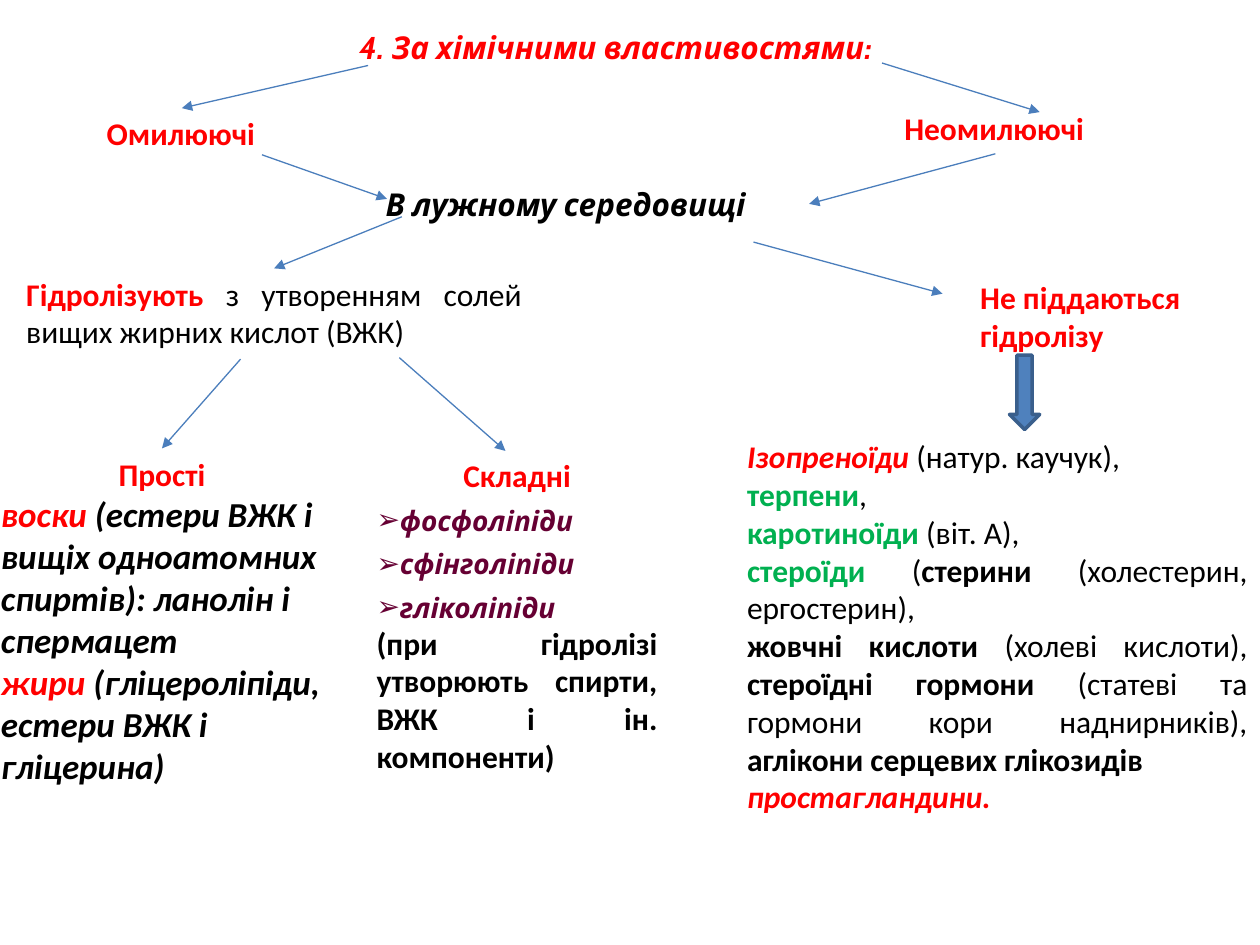
from lxml.etree import SubElement
from pptx import Presentation
from pptx.dml.color import RGBColor
from pptx.enum.shapes import MSO_CONNECTOR as Connector, MSO_SHAPE as Shape
from pptx.enum.text import MSO_ANCHOR as Anchor, MSO_AUTO_SIZE as AutoSize, PP_ALIGN as Align
from pptx.oxml.ns import qn
from pptx.util import Cm, Pt

RED = "FF0000"
GREEN = "00B050"
PURPLE = "660033"
BLACK = "000000"
TOP, BOTTOM = 0, 2


def rgb(value):
    return RGBColor.from_string(value)


def place(shape, left, top, width, height):
    shape.left, shape.top = Cm(left), Cm(top)
    shape.width, shape.height = Cm(width), Cm(height)


def add_run(paragraph, text, size=18, font="Calibri", color=BLACK, bold=True, italic=False):
    run = paragraph.add_run()
    run.text = text
    run.font.size = Pt(size)
    run.font.name = font
    run.font.color.rgb = rgb(color)
    run.font.bold = bold
    run.font.italic = italic


def add_paragraph(frame, runs, align=Align.LEFT, bullet=None, before=0):
    paragraph = frame.paragraphs[0]
    if paragraph.runs:
        paragraph = frame.add_paragraph()
    paragraph.alignment = align
    paragraph.space_before = Pt(before)
    properties = paragraph._p.get_or_add_pPr()
    properties.set("marL", "0")
    properties.set("indent", "0")
    if bullet:
        SubElement(properties, qn("a:buChar"), char=bullet)
    else:
        SubElement(properties, qn("a:buNone"))
    for text, text_format in runs:
        add_run(paragraph, text, **text_format)


def prepare_frame(shape, wrap=True):
    frame = shape.text_frame
    frame.word_wrap = wrap
    frame.auto_size = AutoSize.NONE
    frame.vertical_anchor = Anchor.TOP
    return frame


def add_text(slide, box, paragraphs, align=Align.LEFT, wrap=True):
    shape = slide.shapes.add_textbox(*map(Cm, box))
    frame = prepare_frame(shape, wrap)
    for runs in paragraphs:
        add_paragraph(frame, runs, align)
    return shape


def add_arrow(slide, start, end, begin_shape=None, end_shape=None):
    arrow = slide.shapes.add_connector(Connector.STRAIGHT, *map(Cm, start + end))
    if begin_shape is not None:
        arrow.begin_connect(begin_shape, BOTTOM)
    if end_shape is not None:
        arrow.end_connect(end_shape, TOP)
    arrow.line.color.rgb = rgb("4B7EBC")
    arrow.line.width = Pt(0.75)
    SubElement(arrow.line._get_or_add_ln(), qn("a:tailEnd"), type="triangle")
    SubElement(arrow._element.spPr, qn("a:effectLst"))


def add_block_arrow(slide, box):
    shape = slide.shapes.add_shape(Shape.DOWN_ARROW, *map(Cm, box))
    shape.shadow.inherit = False
    shape.fill.solid()
    shape.fill.fore_color.rgb = rgb("4F81BD")
    shape.line.color.rgb = rgb("3A5F8C")
    shape.line.width = Pt(2)


def fill_title(slide):
    title = slide.shapes.title
    place(title, 6.35, 0.43, 12.12, 2.18)
    heading = dict(font="Cabin", color=RED, italic=True)
    add_paragraph(prepare_frame(title), [("4. За хімічними властивостями:", heading)], Align.CENTER)


def fill_complex_lipids(slide):
    body = slide.placeholders[1]
    place(body, 7.34, 9.07, 6.17, 7.19)
    frame = prepare_frame(body)
    add_paragraph(frame, [("Складні", dict(color=RED))], Align.CENTER)
    for name in ("фосфоліпіди", "сфінголіпіди", "гліколіпіди"):
        item = dict(size=16, font="Cabin", color=PURPLE, italic=True)
        add_paragraph(frame, [(name, item)], bullet="➢", before=5.5)
    note = "(при гідролізі утворюють спирти, ВЖК і ін. компоненти)"
    add_paragraph(frame, [(note, {})], Align.JUSTIFY)


def add_simple_lipids(slide):
    shape = slide.shapes.add_textbox(Cm(-0.23), Cm(9.04), Cm(6.99), Cm(7.77))
    frame = prepare_frame(shape)
    add_paragraph(frame, [("Прості", dict(color=RED))], Align.CENTER)
    large = dict(size=20, italic=True)
    for name, meaning in (
        ("воски ", "(естери ВЖК і вищіх одноатомних спиртів): ланолін і спермацет"),
        ("жири ", "(гліцероліпіди, естери ВЖК і гліцерина)"),
    ):
        add_paragraph(frame, [(name, dict(large, color=RED)), (meaning, large)])
    return shape


def add_unsaponifiable_list(slide):
    plain = dict(bold=False)
    green = dict(color=GREEN)
    accent = dict(color=RED, italic=True)
    paragraphs = [
        [("Ізопреноїди", accent), (" (натур. каучук),", plain)],
        [("терпени", green), (",", plain)],
        [("каротиноїди", green), (" (віт. А),", plain)],
        [("стероїди ", green), ("(", plain), ("стерини", {}),
         (" (холестерин, ергостерин),", plain)],
        [("жовчні кислоти ", {}), ("(холеві кислоти), ", plain),
         ("стероїдні гормони ", {}),
         ("(статеві та гормони кори наднирників), ", plain),
         ("аглікони серцевих глікозидів", {})],
        [("простагландини.", accent)],
    ]
    add_text(slide, (14.81, 8.69, 10.59, 7.95), paragraphs, Align.JUSTIFY)


def main():
    presentation = Presentation()
    presentation.slide_width, presentation.slide_height = Cm(25.4), Cm(19.05)
    slide = presentation.slides.add_slide(presentation.slide_layouts[1])
    red = dict(color=RED)

    fill_title(slide)
    fill_complex_lipids(slide)
    saponifiable = add_text(slide, (1.9, 2.18, 3.53, 1.02), [[("Омилюючі", red)]], wrap=False)
    unsaponifiable = add_text(slide, (17.98, 2.08, 4.17, 1.02), [[("Неомилюючі", red)]], wrap=False)
    medium = add_text(
        slide, (5.28, 3.61, 12.7, 1.02),
        [[("В лужному середовищі", dict(font="Cabin", italic=True))]], Align.CENTER)
    medium.text_frame.margin_right = Cm(0.7)
    hydrolysed = add_text(
        slide, (0.28, 5.41, 10.49, 1.8),
        [[("Гідролізують ", red),
          ("з утворенням солей вищих жирних кислот (ВЖК)", dict(bold=False))]], Align.JUSTIFY)
    add_text(slide, (19.51, 5.49, 5.28, 1.8), [[("Не піддаються гідролізу", red)]])
    add_unsaponifiable_list(slide)
    simple = add_simple_lipids(slide)
    add_block_arrow(slide, (20.35, 7.16, 0.61, 1.5))

    for start, end, begin_shape, end_shape in (
        ((7.42, 1.32), (3.66, 2.18), None, saponifiable),
        ((17.78, 1.27), (20.96, 2.26), None, None),
        ((5.28, 3.12), (7.8, 4.01), None, None),
        ((20.07, 3.12), (16.31, 4.11), unsaponifiable, None),
        ((8.1, 4.37), (5.54, 5.41), None, hydrolysed),
        ((15.19, 4.88), (19, 5.92), None, None),
        ((4.85, 7.24), (3.25, 9.04), None, simple),
        ((8.05, 7.21), (10.19, 9.09), None, None),
    ):
        add_arrow(slide, start, end, begin_shape, end_shape)

    presentation.save("out.pptx")


if __name__ == "__main__":
    main()
